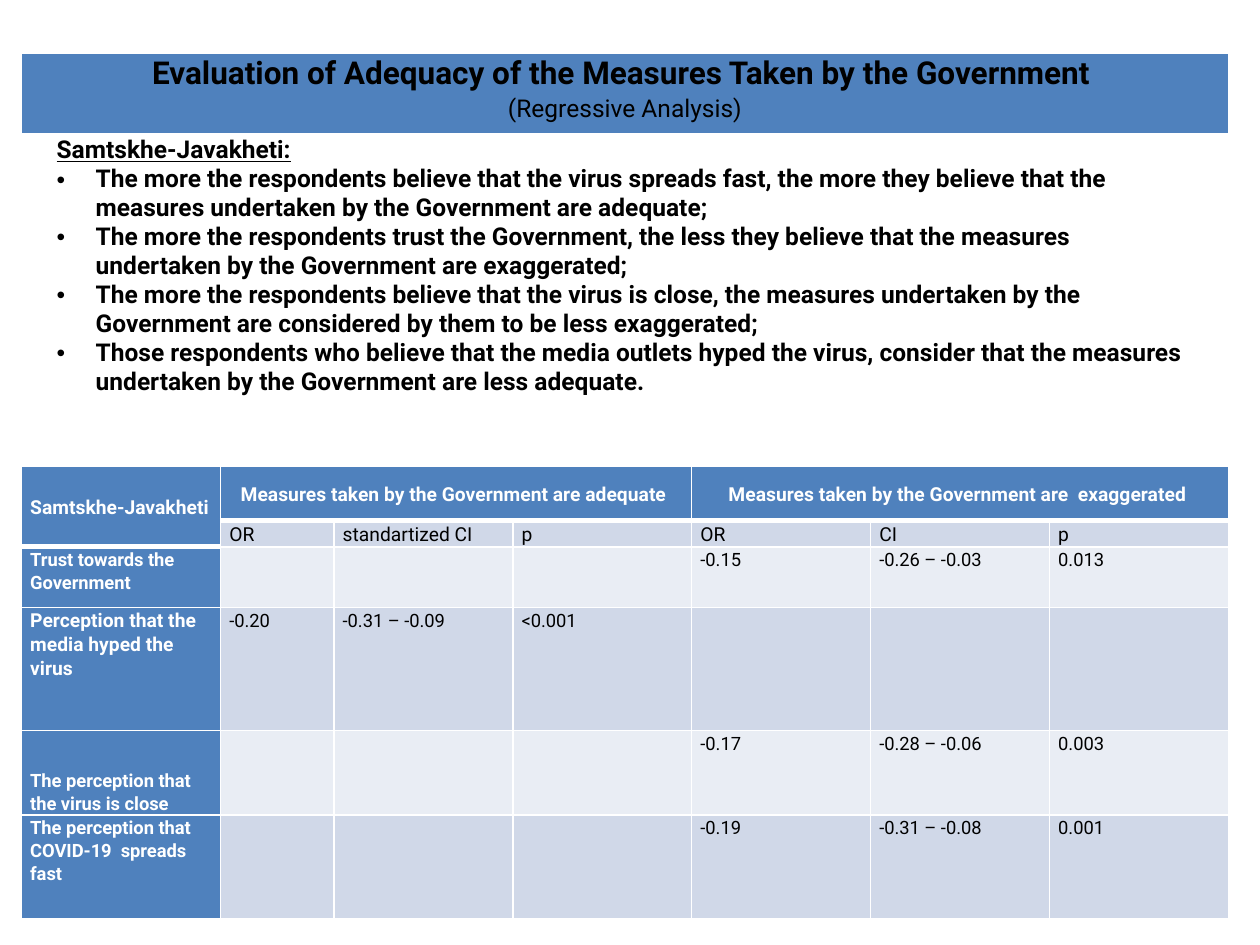
"""Build the slide on the regression results for Samtskhe-Javakheti."""
from dataclasses import dataclass
from typing import Optional

from pptx import Presentation, util as u
from pptx.dml.color import RGBColor
from pptx.enum import text
from pptx.oxml import parse_xml
from pptx.oxml.ns import nsdecls


@dataclass(frozen=True)
class Theme:
    font: str = "Roboto"
    blue: str = "4F81BD"
    dark_band: str = "D0D8E8"
    light_band: str = "E9EDF4"
    white: str = "FFFFFF"
    black: str = "000000"
    title: float = 18
    body: float = 14
    head: float = 11
    value: float = 10.5
    indent: float = 0.31


T = Theme()
MIDDLE, BOTTOM = text.MSO_ANCHOR.MIDDLE, text.MSO_ANCHOR.BOTTOM
CENTER = text.PP_ALIGN.CENTER


@dataclass
class Para:
    words: str
    size: float
    color: str = T.black
    bold: bool = False
    underline: bool = False
    align: Optional[int] = None
    spacing: Optional[float] = 1.07
    after: float = 0
    bullet: bool = False


@dataclass
class Box:
    left: float
    top: float
    cols: list[float]
    rows: list[float]


def draw_para(p, item: Para) -> None:
    """Write one paragraph with its format."""
    layout = {"alignment": item.align, "line_spacing": item.spacing, "space_after": u.Pt(item.after)}
    for name, value in layout.items():
        setattr(p, name, value)
    if item.bullet:
        pPr = p._p.get_or_add_pPr()
        pPr.set("marL", str(u.Inches(T.indent)))
        pPr.set("indent", str(-u.Inches(T.indent)))
        pPr.append(parse_xml(f'<a:buFont {nsdecls("a")} typeface="Arial"/>'))
        pPr.append(parse_xml(f'<a:buChar {nsdecls("a")} char="•"/>'))
    r = p.add_run()
    r.text = item.words
    font = {"name": T.font, "size": u.Pt(item.size), "bold": item.bold, "underline": item.underline}
    for name, value in font.items():
        setattr(r.font, name, value)
    r.font.color.rgb = RGBColor.from_string(item.color)


def draw_cell(cell, fill: str, paras: list[Para], anchor=None, bottom: float = 1, inset: float = 0) -> None:
    """Fill, border and write one table cell."""
    side, top = u.Inches(0.07), u.Inches(inset)
    fmt = {"margin_left": side, "margin_right": side, "margin_top": top, "margin_bottom": 0,
           "vertical_anchor": anchor}
    for name, value in fmt.items():
        setattr(cell, name, value)
    tcPr = cell._tc.get_or_add_tcPr()
    for edge, width in {"L": 1, "R": 1, "T": 1, "B": bottom}.items():
        tcPr.append(parse_xml(
            f'<a:ln{edge} {nsdecls("a")} w="{u.Pt(width)}"><a:solidFill>'
            f'<a:srgbClr val="{T.white}"/></a:solidFill></a:ln{edge}>'))
    cell.fill.solid()
    cell.fill.fore_color.rgb = RGBColor.from_string(fill)
    tf = cell.text_frame
    for i, item in enumerate(paras):
        draw_para(tf.add_paragraph() if i else tf.paragraphs[0], item)


def add_table(s, box: Box):
    """Add an unstyled table with the given column widths and row heights."""
    tbl = s.shapes.add_table(
        len(box.rows), len(box.cols), u.Inches(box.left), u.Inches(box.top),
        u.Inches(sum(box.cols)), u.Inches(sum(box.rows))).table
    tbl.first_row = tbl.horz_banding = False
    for col, width in zip(tbl.columns, box.cols):
        col.width = u.Inches(width)
    for row, height in zip(tbl.rows, box.rows):
        row.height = u.Inches(height)
    return tbl


def add_panel(s, box: Box, fill: str, paras: list[Para]) -> None:
    """Add a one-cell table holding a block of text."""
    draw_cell(add_table(s, box).cell(0, 0), fill, paras, bottom=3)


TITLE = [
    Para("Evaluation of Adequacy of the Measures Taken by the Government ", T.title, bold=True, align=CENTER),
    Para("(Regressive Analysis)", T.body, align=CENTER),
]
FINDINGS = [
    "The more the respondents believe that the virus spreads fast, the more they believe that the "
    "measures undertaken by the Government are adequate;",
    "The more the respondents trust the Government, the less they believe that the measures "
    "undertaken by the Government are exaggerated;",
    "The more the respondents believe that the virus is close, the measures undertaken by the "
    "Government are considered by them to be less exaggerated;",
    "Those respondents who believe that the media outlets hyped the virus, consider that the measures "
    "undertaken by the Government are less adequate.",
]
NONE = [""] * 3
RESULTS = [
    ["Samtskhe-Javakheti", "Measures taken by the Government are adequate ", "", "",
     "Measures taken by the Government are  exaggerated ", "", ""],
    ["", "OR", "standartized CI", "p", "OR", "CI", "p"],
    ["Trust towards the Government", *NONE, "-0.15", "-0.26 – -0.03", "0.013"],
    ["Perception that the media hyped the virus", "-0.20", "-0.31 – -0.09", "<0.001", *NONE],
    ["The perception that the virus is close", *NONE, "-0.17", "-0.28 – -0.06", "0.003"],
    ["The perception that COVID-19  spreads fast", *NONE, "-0.19", "-0.31 – -0.08", "0.001"],
]
MEDIA_ROW, CLOSE_ROW = 3, 4


def add_results(s, box: Box) -> None:
    """Add the regression table with its merged headings."""
    tbl = add_table(s, box)
    for i, row in enumerate(RESULTS):
        for j, words in enumerate(row):
            heading = i == 0 or j == 0
            band = T.dark_band if i % 2 else T.light_band
            size = T.head if i < 2 or (i == MEDIA_ROW and j == 0) else T.value
            para = Para(words, size, T.white if heading else T.black, heading,
                        align=CENTER if i == 0 and j else None, after=8)
            anchor = MIDDLE if i < 2 else BOTTOM if (i, j) == (CLOSE_ROW, 0) else None
            draw_cell(tbl.cell(i, j), T.blue if heading else band, [para] if words else [],
                      anchor, 3 if i == 0 or (i, j) == (1, 0) else 1, 0.01)
    for first, last in (((0, 0), (1, 0)), ((0, 1), (0, 3)), ((0, 4), (0, 6))):
        tbl.cell(*first).merge(tbl.cell(*last))


def main() -> None:
    """Build and save the slide."""
    prs = Presentation()
    prs.slide_width, prs.slide_height = u.Inches(10), u.Inches(7.5)
    s = prs.slides.add_slide(prs.slide_layouts[6])
    add_panel(s, Box(0.17, 0.42, [9.58], [0.65]), T.blue, TITLE)
    add_results(s, Box(0.17, 3.7, [1.58, 0.9] + [1.42] * 5, [0.43, 0.21, 0.48, 0.98, 0.67, 0.82]))
    region = Para("Samtskhe-Javakheti:", T.body, bold=True, underline=True, spacing=None)
    bullets = [Para(words, T.body, bold=True, spacing=None, bullet=True) for words in FINDINGS]
    add_panel(s, Box(0.38, 1.08, [9.17], [2.33]), T.white, [region, *bullets])
    prs.save("out.pptx")


if __name__ == "__main__":
    main()
